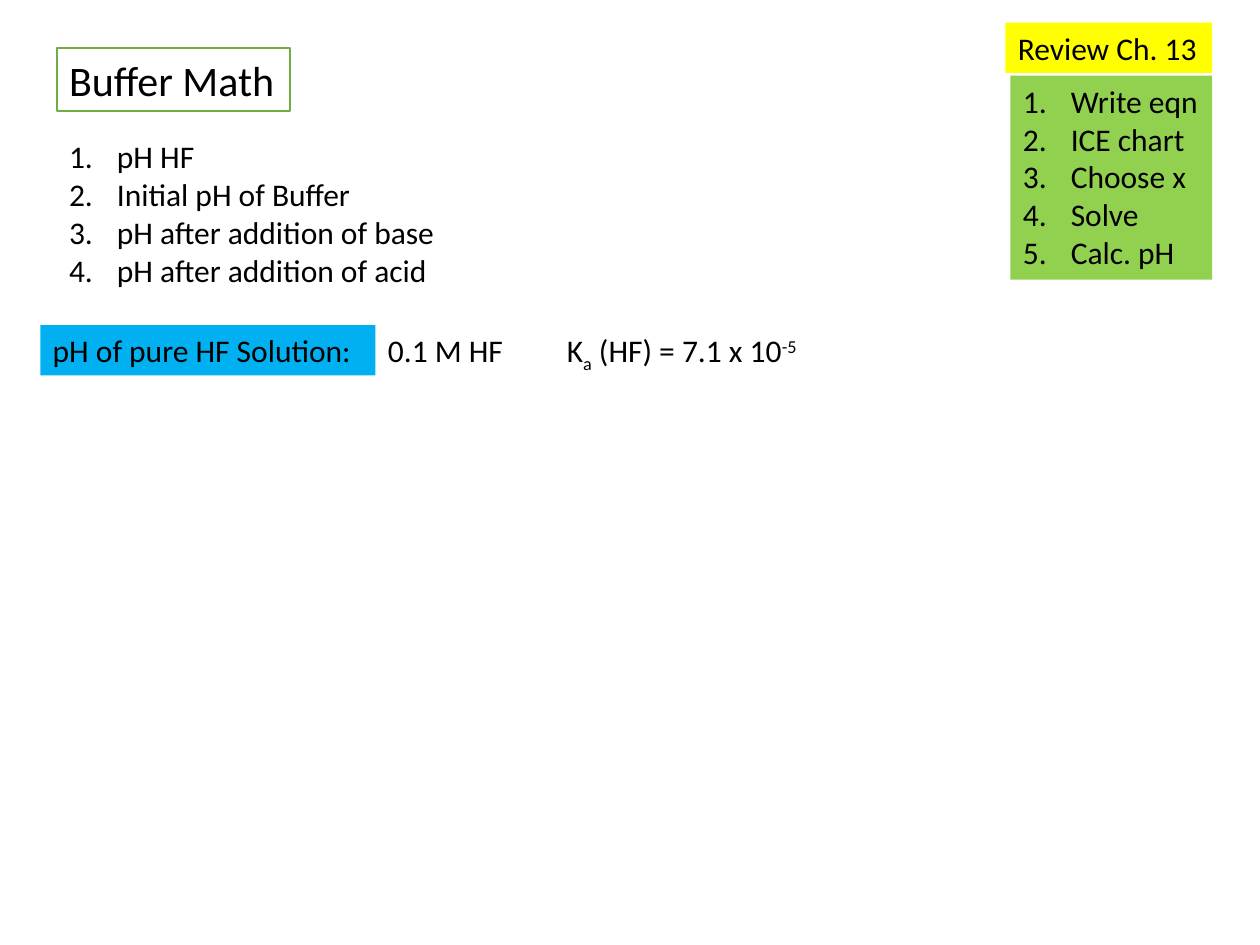
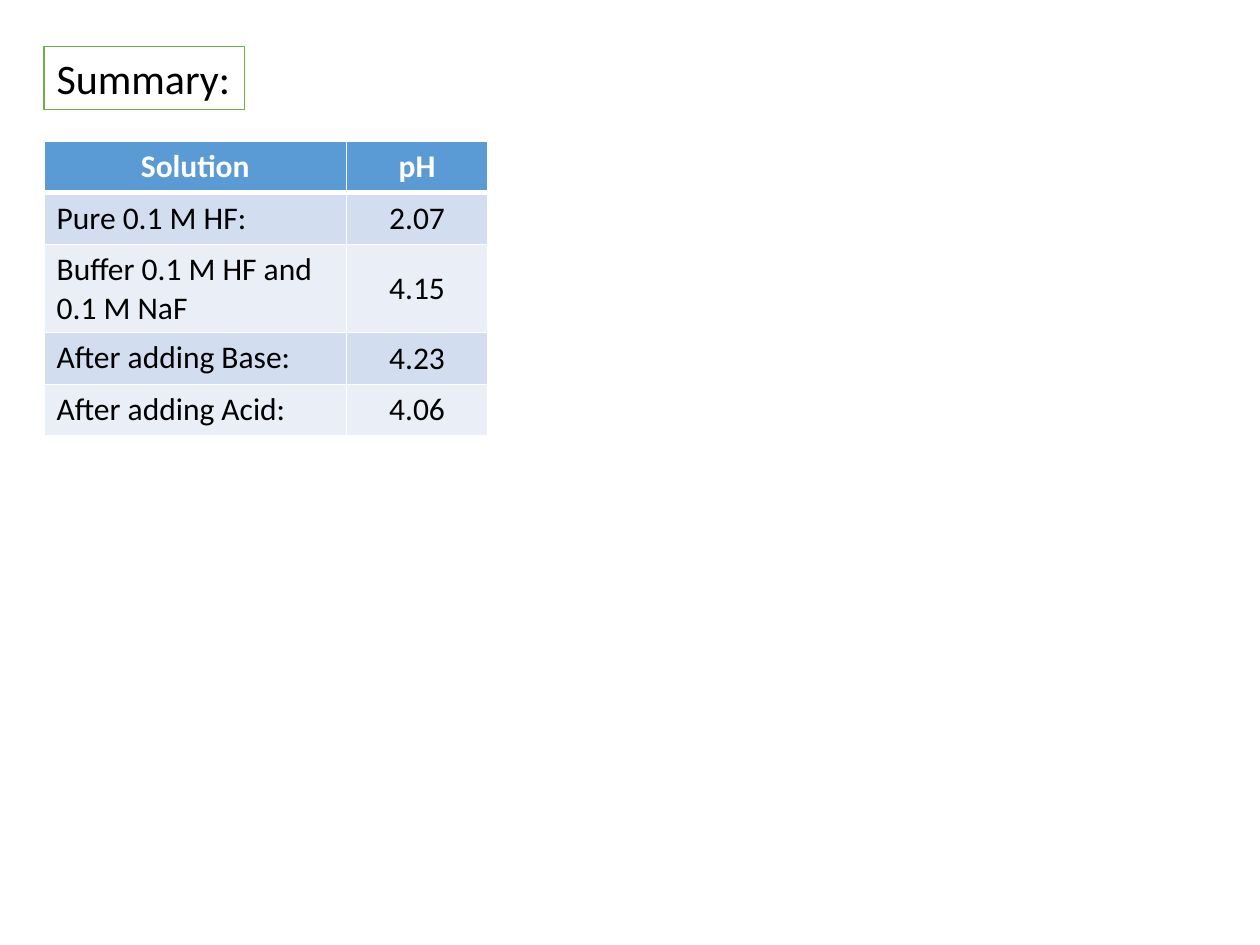
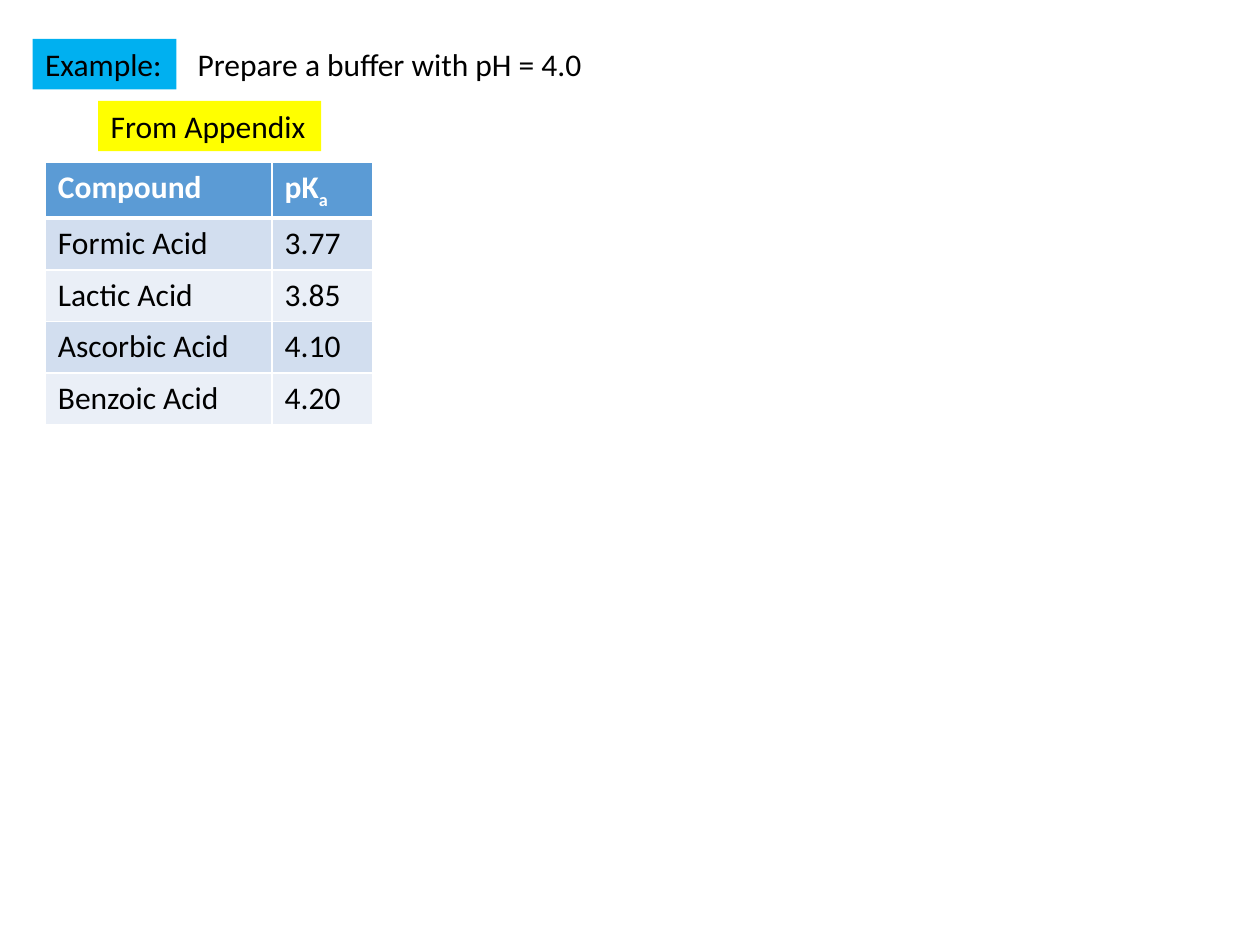
from dataclasses import dataclass
from typing import Any, NamedTuple

from lxml import etree
from pptx import Presentation
from pptx import util as u
from pptx.dml.color import RGBColor
from pptx.enum import shapes, text
from pptx.oxml.ns import qn

SCALE = 9144


@dataclass(frozen=True)
class Theme:
    font: str = "Calibri"
    title: int = 24
    body: int = 18
    ink: str = "000000"
    white: str = "FFFFFF"
    rim: str = "70AD47"
    note: str = "FFFF00"
    steps: str = "92D050"
    topic: str = "00B0F0"
    head: str = "5B9BD5"
    bands: tuple[str, str] = ("D2DEEF", "EAEFF7")


THEME = Theme()
LEFT, MID = text.PP_ALIGN.LEFT, text.PP_ALIGN.CENTER
TOP, CORE = text.MSO_ANCHOR.TOP, text.MSO_ANCHOR.MIDDLE


class Part(NamedTuple):
    text: str
    base: int = 0


Line = str | tuple[Part, ...]


class Box(NamedTuple):
    x: int
    y: int
    w: int
    h: int
    lines: tuple[Line, ...]
    fill: str | None = None
    rim: str | None = None
    size: int = THEME.body
    listed: bool = False
    tab: int = 0


class Grid(NamedTuple):
    x: int
    y: int
    cols: tuple[int, ...]
    rows: tuple[int, ...]
    cells: tuple[tuple[Line, ...], ...]
    heads: tuple[Any, ...] = (LEFT, LEFT)
    aligns: tuple[Any, ...] = (LEFT, LEFT)
    anchors: tuple[Any, ...] = (TOP, TOP)


def px(num: int) -> u.Emu:
    return u.Emu(num * SCALE)


def apply(item: Any, form: dict[str, Any]) -> None:
    for key, val in form.items():
        setattr(item, key, val)


def paint(item: Any, hue: str) -> None:
    item.fill.solid()
    item.fill.fore_color.rgb = RGBColor.from_string(hue)


def write(para: Any, line: Line, size: int, hue: str, bold: bool = False) -> None:
    parts = (Part(line),) if isinstance(line, str) else line
    for part in parts:
        run = para.add_run()
        run.text = part.text
        apply(run.font, {"name": THEME.font, "size": u.Pt(size), "bold": bold})
        run.font.color.rgb = RGBColor.from_string(hue)
        if part.base:
            run._r.get_or_add_rPr().set("baseline", str(part.base * 1000))


def number(para: Any) -> None:
    props = para._p.get_or_add_pPr()
    props.set("marL", str(px(38)))
    props.set("indent", str(-px(38)))
    etree.SubElement(props, qn("a:buFont"), typeface="+mj-lt")
    etree.SubElement(props, qn("a:buAutoNum"), type="arabicPeriod")


def stop(para: Any, tab: int) -> None:
    tabs = etree.SubElement(para._p.get_or_add_pPr(), qn("a:tabLst"))
    etree.SubElement(tabs, qn("a:tab"), pos=str(px(tab)), algn="l")


def draw_box(slide: Any, box: Box) -> None:
    area = [px(num) for num in box[:4]]
    if box.fill:
        shape = slide.shapes.add_shape(shapes.MSO_SHAPE.RECTANGLE, *area)
        shape.shadow.inherit = False
        paint(shape, box.fill)
        if box.rim:
            shape.line.color.rgb = RGBColor.from_string(box.rim)
            shape.line.width = u.Pt(1)
        else:
            shape.line.fill.background()
    else:
        shape = slide.shapes.add_textbox(*area)
    frame = shape.text_frame
    apply(frame, {"word_wrap": False, "vertical_anchor": TOP,
                  "auto_size": text.MSO_AUTO_SIZE.SHAPE_TO_FIT_TEXT})
    for pos, line in enumerate(box.lines):
        para = frame.add_paragraph() if pos else frame.paragraphs[0]
        para.alignment = LEFT
        if box.listed:
            number(para)
        if box.tab:
            stop(para, box.tab)
        write(para, line, box.size, THEME.ink)


def edge(cell: Any, row: int) -> None:
    props = cell._tc.get_or_add_tcPr()
    wide = {"T": row == 1, "B": row == 0}
    for pos, side in enumerate("LRTB"):
        width = u.Pt(3 if wide.get(side) else 1)
        rule = etree.Element(qn(f"a:ln{side}"), w=str(width))
        fill = etree.SubElement(rule, qn("a:solidFill"))
        etree.SubElement(fill, qn("a:srgbClr"), val=THEME.white)
        props.insert(pos, rule)


def draw_grid(slide: Any, grid: Grid) -> None:
    table = slide.shapes.add_table(
        len(grid.rows), len(grid.cols), px(grid.x), px(grid.y),
        px(sum(grid.cols)), px(sum(grid.rows))).table
    for col, width in zip(table.columns, grid.cols):
        col.width = px(width)
    for row, height in zip(table.rows, grid.rows):
        row.height = px(height)
    for row, lines in enumerate(grid.cells):
        top = row == 0
        for col, line in enumerate(lines):
            cell = table.cell(row, col)
            paint(cell, THEME.head if top else THEME.bands[(row - 1) % 2])
            edge(cell, row)
            cell.vertical_anchor = TOP if top else grid.anchors[col]
            para = cell.text_frame.paragraphs[0]
            para.alignment = (grid.heads if top else grid.aligns)[col]
            write(para, line, THEME.body, THEME.white if top else THEME.ink, top)


def title(x: int, y: int, w: int, line: str) -> Box:
    return Box(x, y, w, 50, (line,), THEME.white, THEME.rim, THEME.title)


def label(x: int, y: int, w: int, line: Line, fill: str | None = None,
          tab: int = 0) -> Box:
    return Box(x, y, w, 40, (line,), fill, tab=tab)


SLIDES: tuple[tuple[Box | Grid, ...], ...] = (
    (
        title(45, 38, 185, "Buffer Math"),
        label(798, 18, 164, "Review Ch. 13", THEME.note),
        Box(45, 104, 320, 131,
            ("pH HF", "Initial pH of Buffer", "pH after addition of base",
             "pH after addition of acid"), listed=True),
        Box(802, 60, 160, 162,
            ("Write eqn", "ICE chart", "Choose x", "Solve", "Calc. pH"),
            THEME.steps, listed=True),
        label(32, 258, 266, "pH of pure HF Solution:", THEME.topic),
        label(298, 258, 352,
              (Part("0.1 M HF\tK"), Part("a", -25),
               Part(" (HF) = 7.1 x 10"), Part("-5", 30)), tab=142),
    ),
    (
        title(35, 37, 159, "Summary:"),
        Grid(35, 112, (240, 112), (41, 41, 70, 41, 41),
             (("Solution", "pH"),
              ("Pure 0.1 M HF:", "2.07"),
              ("Buffer 0.1 M HF and 0.1 M NaF", "4.15"),
              ("After adding Base:", "4.23"),
              ("After adding Acid:", "4.06")),
             (MID, MID), (LEFT, MID), (TOP, CORE)),
    ),
    (
        label(26, 31, 114, "Example:", THEME.topic),
        label(147, 31, 329, "Prepare a buffer with pH = 4.0"),
        Grid(36, 129, (180, 80), (41,) * 5,
             (("Compound", (Part("pK"), Part("a", -25))),
              ("Formic Acid", "3.77"),
              ("Lactic Acid", "3.85"),
              ("Ascorbic Acid", "4.10"),
              ("Benzoic Acid", "4.20"))),
        label(78, 80, 177, "From Appendix", THEME.note),
    ),
)


def main() -> None:
    deck = Presentation()
    apply(deck, {"slide_width": px(1000), "slide_height": px(750)})
    for items in SLIDES:
        slide = deck.slides.add_slide(deck.slide_layouts[6])
        for item in items:
            if isinstance(item, Box):
                draw_box(slide, item)
            else:
                draw_grid(slide, item)
    deck.save("out.pptx")


if __name__ == "__main__":
    main()
